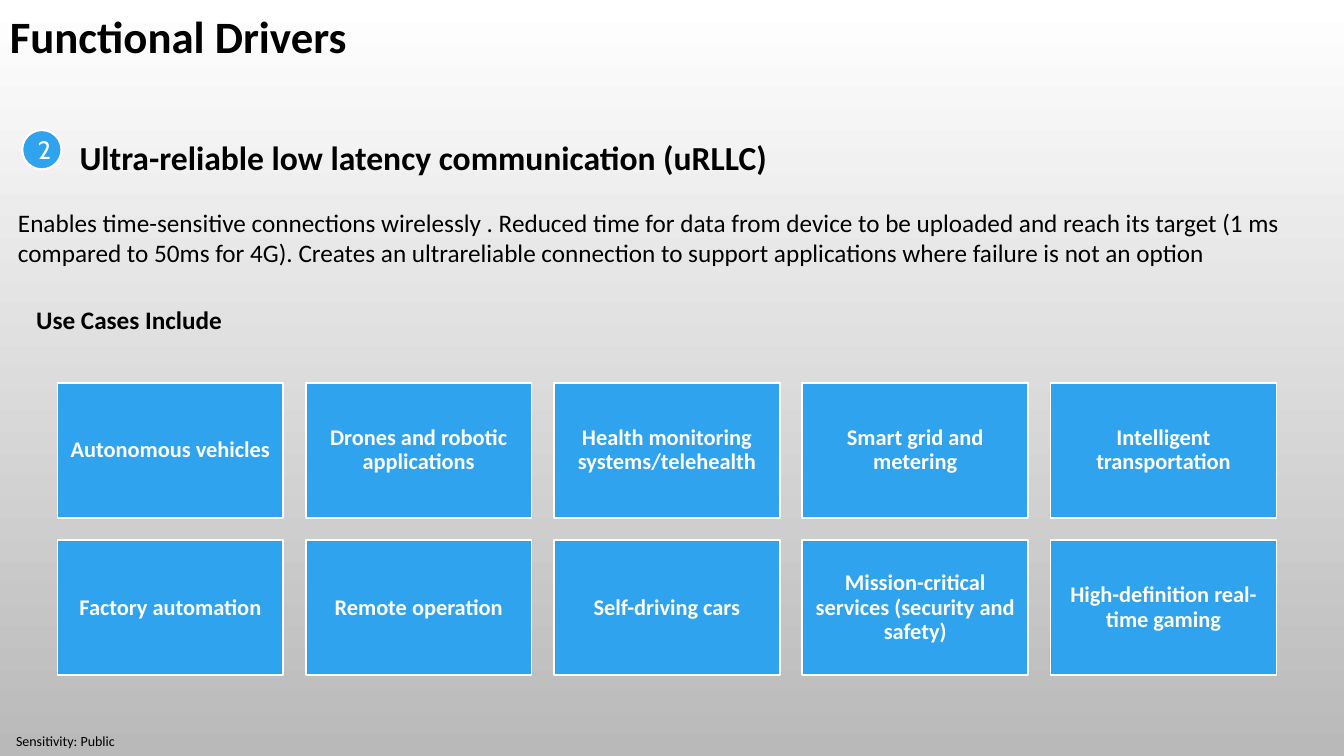
from dataclasses import dataclass

from pptx import Presentation
from pptx.dml.color import RGBColor
from pptx.enum.shapes import MSO_SHAPE as Preset
from pptx.enum.text import MSO_ANCHOR as Anchor, PP_ALIGN as Align
from pptx.util import Inches, Pt

BLACK, WHITE, BLUE = "000000", "FFFFFF", "2FA3EE"
COLUMNS = 5
CARD_WIDTH, CARD_HEIGHT = 2.24, 1.34
GRID_LEFT, GRID_TOP = 0.57, 3.8
COLUMN_STEP, ROW_STEP = 2.4625, 1.56

USE_CASES = [
    "Autonomous vehicles",
    "Drones and robotic applications",
    "Health monitoring systems/telehealth",
    "Smart grid and metering",
    "Intelligent transportation",
    "Factory automation",
    "Remote operation",
    "Self-driving cars",
    "Mission-critical services (security and safety)",
    "High-definition real-time gaming",
]


@dataclass(frozen=True)
class Area:
    left: float
    top: float
    width: float
    height: float

    def lengths(self) -> list:
        return [Inches(n) for n in (self.left, self.top, self.width, self.height)]


def color(value: str) -> RGBColor:
    return RGBColor.from_string(value)


def write(shape, text: str, *, size: float, font: str = "Calibri", ink: str = BLACK,
          bold: bool = False, align=Align.LEFT, anchor=Anchor.TOP,
          spacing: float = 1.0, insets: tuple = (0.1, 0.05, 0.1, 0.05)) -> None:
    """Fill a shape with one paragraph; insets run left, top, right, bottom."""
    frame = shape.text_frame
    frame.word_wrap = True
    frame.vertical_anchor = anchor
    frame.margin_left, frame.margin_top, frame.margin_right, frame.margin_bottom = (
        Inches(inset) for inset in insets)
    para = frame.paragraphs[0]
    para.alignment = align
    para.line_spacing = spacing
    span = para.add_run()
    span.text = text
    span.font.name = font
    span.font.size = Pt(size)
    span.font.bold = bold
    span.font.color.rgb = color(ink)


def add_text(page, area: Area, text: str, **style) -> None:
    write(page.shapes.add_textbox(*area.lengths()), text, **style)


def add_blue_shape(page, preset, area: Area, border: float, text: str, **style) -> None:
    shape = page.shapes.add_shape(preset, *area.lengths())
    shape.shadow.inherit = False
    shape.fill.solid()
    shape.fill.fore_color.rgb = color(BLUE)
    shape.line.color.rgb = color(WHITE)
    shape.line.width = Pt(border)
    write(shape, text, ink=WHITE, align=Align.CENTER, anchor=Anchor.MIDDLE, **style)


def paint_background(page) -> None:
    fill = page.background.fill
    fill.gradient()
    fill.gradient_angle = 270
    for stop, position, shade in zip(fill.gradient_stops, (0, 1), (WHITE, "B9B9B9")):
        stop.position = position
        stop.color.rgb = color(shade)


def main() -> None:
    deck = Presentation()
    deck.slide_width, deck.slide_height = Inches(13.33), Inches(7.5)
    page = deck.slides.add_slide(deck.slide_layouts[6])
    paint_background(page)

    add_text(page, Area(0, 7.21, 1.3, 0.29), "Sensitivity: Public", size=10,
             anchor=Anchor.MIDDLE, insets=(0.16, 0, 0, 0))
    add_text(page, Area(0, 0.1, 12.47, 0.54), "Functional Drivers",
             size=32, bold=True, spacing=0.9)
    add_text(page, Area(0.69, 1.31, 8.52, 0.5),
             "Ultra-reliable low latency communication (uRLLC)", size=24, bold=True)
    add_text(page, Area(0.08, 2.01, 12.81, 0.71),
             "Enables time-sensitive connections wirelessly . Reduced time for data from "
             "device to be uploaded and reach its target (1 ms compared to 50ms for 4G). "
             "Creates an ultrareliable connection to support applications where failure "
             "is not an option", size=18)
    add_text(page, Area(0.26, 2.97, 4.64, 0.4), "Use Cases Include", size=18, bold=True)

    for index, use_case in enumerate(USE_CASES):
        row, column = divmod(index, COLUMNS)
        card = Area(GRID_LEFT + column * COLUMN_STEP, GRID_TOP + row * ROW_STEP,
                    CARD_WIDTH, CARD_HEIGHT)
        add_blue_shape(page, Preset.RECTANGLE, card, 1.25, use_case, size=16,
                       bold=True, spacing=0.9, insets=(0.07,) * 4)

    add_blue_shape(page, Preset.OVAL, Area(0.22, 1.29, 0.39, 0.39), 1.5, "2",
                   size=18, font="Cabin")
    deck.save("out.pptx")


if __name__ == "__main__":
    main()
